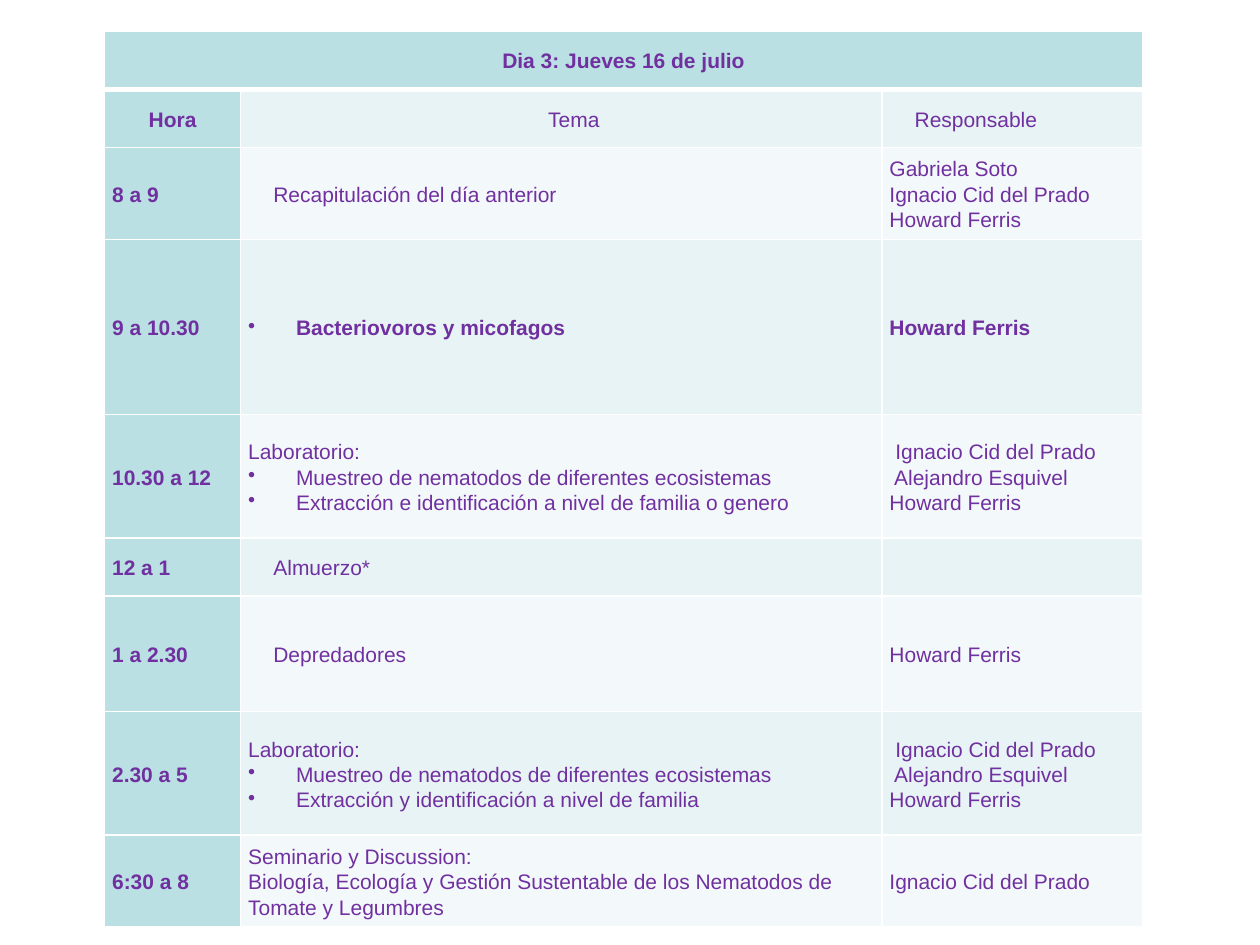
from pptx import Presentation
from pptx.dml.color import RGBColor
from pptx.enum.text import MSO_ANCHOR as Anchor, PP_ALIGN as Align
from pptx.oxml.ns import qn
from pptx.util import Inches, Pt
from lxml.etree import SubElement

PURPLE = RGBColor(0x70, 0x30, 0xA0)
TEAL = RGBColor(0xBB, 0xE0, 0xE3)
BAND_DARK = RGBColor(0xE7, 0xF3, 0xF4)
BAND_LIGHT = RGBColor(0xF3, 0xF9, 0xFA)
WHITE = RGBColor(0xFF, 0xFF, 0xFF)

CELL_FORMAT = {
    "vertical_anchor": Anchor.MIDDLE,
    "margin_left": Inches(0.06),
    "margin_top": Inches(0.01),
    "margin_right": Inches(0.06),
    "margin_bottom": 0,
}
FONT_FORMAT = {"name": "Arial", "size": Pt(12)}

COLUMN_WIDTHS = [1.08, 5.09, 2.07]
ROW_HEIGHTS = [0.46, 0.46, 0.73, 1.39, 0.98, 0.46, 0.92, 0.98, 0.73]

PLAIN, INDENTED, BULLETED = "plain", "indented", "bulleted"
PARAGRAPH_INDENTS = {INDENTED: (0.2, 0), BULLETED: (0.38, -0.38)}

TITLE = "Dia 3: Jueves 16 de julio"
HEADINGS = ["Hora", "Tema", "Responsable"]
FERRIS = "Howard Ferris"
CID = "Ignacio Cid del Prado"
LAB_TEAM = [" " + CID, " Alejandro Esquivel", FERRIS]
KEYNOTE_HOUR = "9 a 10.30"


def lab_topics(extraction):
    return [
        (PLAIN, "Laboratorio:"),
        (BULLETED, "Muestreo de nematodos de diferentes ecosistemas"),
        (BULLETED, extraction),
    ]


SESSIONS = [
    ("8 a 9", [(INDENTED, "Recapitulación del día anterior")],
     ["Gabriela Soto", CID, FERRIS]),
    (KEYNOTE_HOUR, [(BULLETED, "Bacteriovoros y micofagos")], [FERRIS]),
    ("10.30 a 12",
     lab_topics("Extracción e identificación a nivel de familia o genero"),
     LAB_TEAM),
    ("12 a 1", [(INDENTED, "Almuerzo*")], []),
    ("1 a 2.30", [(INDENTED, "Depredadores")], [FERRIS]),
    ("2.30 a 5",
     lab_topics("Extracción y identificación a nivel de familia"), LAB_TEAM),
    ("6:30 a 8",
     [(PLAIN, "Seminario y Discussion:"),
      (PLAIN, "Biología, Ecología y Gestión Sustentable de los Nematodos "
              "de Tomate y Legumbres")],
     [CID]),
]


def apply_format(target, values):
    for name, value in values.items():
        setattr(target, name, value)


def add_border(cell, side, width):
    properties = cell._tc.get_or_add_tcPr()
    line = SubElement(properties, qn(f"a:ln{side}"), w=str(Pt(width)))
    fill = SubElement(line, qn("a:solidFill"))
    SubElement(fill, qn("a:srgbClr"), val=str(WHITE))


def style_cell(cell, color, top=1, bottom=1):
    apply_format(cell, CELL_FORMAT)
    for side, width in zip("LRTB", (1, 1, top, bottom)):
        add_border(cell, side, width)
    cell.fill.solid()
    cell.fill.fore_color.rgb = color


def indent_paragraph(paragraph, kind):
    left, first = PARAGRAPH_INDENTS[kind]
    properties = paragraph._p.get_or_add_pPr()
    properties.set("marL", str(Inches(left)))
    properties.set("indent", str(Inches(first)))
    if kind == BULLETED:
        SubElement(properties, qn("a:buChar"), char="•")
        tabs = SubElement(properties, qn("a:tabLst"))
        SubElement(tabs, qn("a:tab"), pos=str(Inches(0.5)), algn="l")


def write_lines(cell, lines, bold=False, **paragraph_format):
    frame = cell.text_frame
    for number, (kind, text) in enumerate(lines):
        paragraph = frame.add_paragraph() if number else frame.paragraphs[0]
        apply_format(paragraph, {"line_spacing": 1.07, **paragraph_format})
        if kind in PARAGRAPH_INDENTS:
            indent_paragraph(paragraph, kind)
        run = paragraph.add_run()
        run.text = text
        apply_format(run.font, {**FONT_FORMAT, "bold": bold})
        run.font.color.rgb = PURPLE


def add_schedule(slide):
    schedule = slide.shapes.add_table(
        len(ROW_HEIGHTS), len(COLUMN_WIDTHS), Inches(0.83), Inches(0.25),
        Inches(sum(COLUMN_WIDTHS)), Inches(sum(ROW_HEIGHTS))).table
    for column, width in zip(schedule.columns, COLUMN_WIDTHS):
        column.width = Inches(width)
    for row, height in zip(schedule.rows, ROW_HEIGHTS):
        row.height = Inches(height)
    return schedule


def fill_title(schedule):
    for cell in schedule.rows[0].cells:
        style_cell(cell, TEAL, bottom=3)
    title_cell = schedule.cell(0, 0)
    title_cell.merge(schedule.cell(0, 2))
    write_lines(title_cell, [(PLAIN, TITLE)], bold=True,
                alignment=Align.CENTER, line_spacing=1.0)


def fill_headings(schedule):
    hour, topic, speaker = schedule.rows[1].cells
    for cell, color in zip((hour, topic, speaker),
                           (TEAL, BAND_DARK, BAND_DARK)):
        style_cell(cell, color, top=3)
    write_lines(hour, [(PLAIN, HEADINGS[0])], bold=True,
                alignment=Align.CENTER, space_after=Pt(8))
    write_lines(topic, [(INDENTED, HEADINGS[1])], alignment=Align.CENTER)
    write_lines(speaker, [(INDENTED, HEADINGS[2])])


def fill_sessions(schedule):
    for index, (hour, topics, speakers) in enumerate(SESSIONS):
        band = BAND_DARK if index % 2 else BAND_LIGHT
        cells = [schedule.cell(index + 2, column) for column in range(3)]
        for cell, color in zip(cells, (TEAL, band, band)):
            style_cell(cell, color)
        keynote = hour == KEYNOTE_HOUR
        write_lines(cells[0], [(PLAIN, hour)], bold=True, space_after=Pt(8))
        write_lines(cells[1], topics, bold=keynote)
        write_lines(cells[2], [(PLAIN, name) for name in speakers],
                    bold=keynote)


def main():
    deck = Presentation()
    deck.slide_width, deck.slide_height = Inches(10), Inches(7.5)
    slide = deck.slides.add_slide(deck.slide_layouts[6])
    schedule = add_schedule(slide)
    fill_title(schedule)
    fill_headings(schedule)
    fill_sessions(schedule)
    deck.save("out.pptx")


if __name__ == "__main__":
    main()
